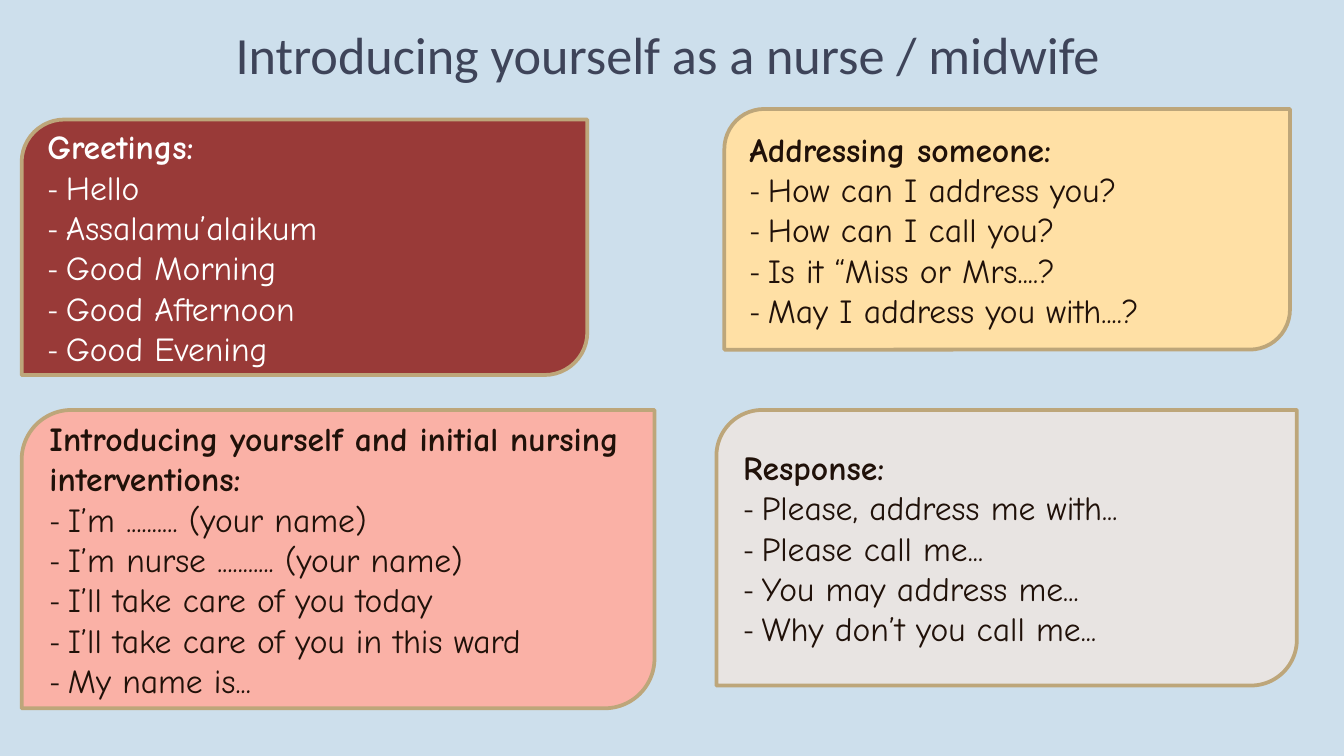
from dataclasses import dataclass

from pptx import Presentation
from pptx.dml.color import RGBColor
from pptx.enum.shapes import MSO_SHAPE
from pptx.enum.text import MSO_ANCHOR, MSO_AUTO_SIZE, PP_ALIGN
from pptx.slide import Slide
from pptx.util import Cm, Pt

SKY = RGBColor(0xCD, 0xDF, 0xEC)
SLATE = RGBColor(0x3E, 0x44, 0x59)
TAN = RGBColor(0xBD, 0xA6, 0x7A)
WHITE = RGBColor(0xFF, 0xFF, 0xFF)
DARK = RGBColor(0x20, 0x11, 0x09)
RED = RGBColor(0x99, 0x3A, 0x38)
PINK = RGBColor(0xFA, 0xB1, 0xA6)
YELLOW = RGBColor(0xFF, 0xE0, 0xA5)
GREY = RGBColor(0xE8, 0xE4, 0xE2)


@dataclass
class Card:
    """A group of phrases; lengths in centimetres."""
    left: float
    top: float
    width: float
    height: float
    fill: RGBColor
    ink: RGBColor
    heading: str
    phrases: list[str]


CARDS = [
    Card(0.41, 2.26, 10.69, 4.83, RED, WHITE, "Greetings:",
         ["Hello", "Assalamu’alaikum", "Good Morning", "Good Afternoon", "Good Evening"]),
    Card(0.41, 7.75, 11.96, 5.64, PINK, DARK,
         "Introducing yourself and initial nursing interventions:",
         ["I’m .......... (your name)", "I’m nurse ........... (your name)",
          "I’ll take care of you today", "I’ll take care of you in this ward",
          "My name is..."]),
    Card(13.69, 2.06, 10.69, 4.55, YELLOW, DARK, "Addressing someone:",
         ["How can I address you?", "How can I call you?",
          "Is it “Miss or Mrs....?", "May I address you with....?"]),
    Card(13.54, 7.75, 10.97, 5.21, GREY, DARK, "Response:",
         ["Please, address me with...", "Please call me...",
          "You may address me...", "Why don’t you call me..."]),
]


def add_run(paragraph, text: str, face: str, size: float, color: RGBColor,
            bold: bool = False) -> None:
    run = paragraph.add_run()
    run.text = text
    style = {"name": face, "size": Pt(size), "bold": bold}
    for attribute, value in style.items():
        setattr(run.font, attribute, value)
    run.font.color.rgb = color


def add_title(slide: Slide, text: str) -> None:
    title = slide.shapes.title
    place = {"left": Cm(0.51), "top": Cm(0.53), "width": Cm(24.21), "height": Cm(1.32)}
    for attribute, value in place.items():
        setattr(title, attribute, value)
    frame = title.text_frame
    layout = {"auto_size": MSO_AUTO_SIZE.NONE, "word_wrap": True,
              "vertical_anchor": MSO_ANCHOR.BOTTOM,
              "margin_left": Cm(0.25), "margin_right": Cm(0.25),
              "margin_top": Cm(0.25), "margin_bottom": Cm(0.25)}
    for attribute, value in layout.items():
        setattr(frame, attribute, value)
    heading = frame.paragraphs[0]
    heading.alignment = PP_ALIGN.CENTER
    add_run(heading, text, "Calibri", 28, SLATE)


def add_card(slide: Slide, card: Card) -> None:
    panel = slide.shapes.add_shape(
        MSO_SHAPE.ROUND_2_DIAG_RECTANGLE,
        Cm(card.left), Cm(card.top), Cm(card.width), Cm(card.height))
    panel.shadow.inherit = False
    panel.fill.solid()
    panel.fill.fore_color.rgb = card.fill
    panel.line.color.rgb = TAN
    panel.line.width = Pt(2)

    frame = panel.text_frame
    frame.word_wrap = True
    frame.vertical_anchor = MSO_ANCHOR.MIDDLE
    heading = frame.paragraphs[0]
    heading.alignment = PP_ALIGN.LEFT
    add_run(heading, card.heading, "Comic Neue", 18, card.ink, bold=True)
    for phrase in card.phrases:
        line = frame.add_paragraph()
        line.alignment = PP_ALIGN.LEFT
        add_run(line, "- ", "Cambria", 18, card.ink)
        add_run(line, phrase, "Comic Neue", 18, card.ink)


def main() -> None:
    deck = Presentation()
    deck.slide_width, deck.slide_height = Cm(25.4), Cm(14.29)
    slide = deck.slides.add_slide(deck.slide_layouts[5])
    slide.background.fill.solid()
    slide.background.fill.fore_color.rgb = SKY
    add_title(slide, "Introducing yourself as a nurse / midwife")
    for card in CARDS:
        add_card(slide, card)
    deck.save("out.pptx")


if __name__ == "__main__":
    main()
